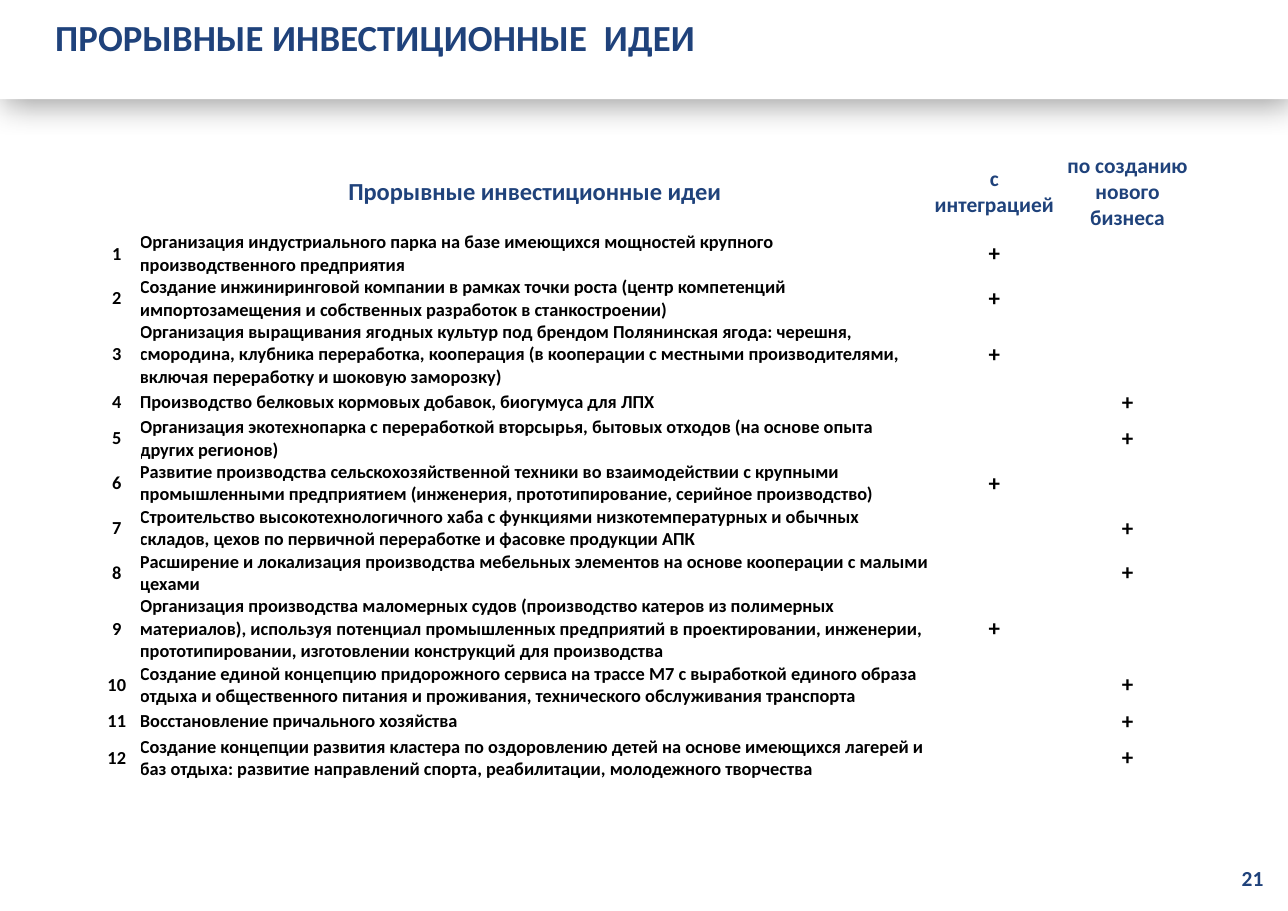
from dataclasses import dataclass

import pptx
import pptx.dml.color
import pptx.enum.shapes
import pptx.enum.text
import pptx.oxml
import pptx.oxml.ns
import pptx.util
from lxml import etree

Inches = pptx.util.Inches
Pt = pptx.util.Pt
Align = pptx.enum.text.PP_ALIGN
Anchor = pptx.enum.text.MSO_ANCHOR

NAVY = pptx.dml.color.RGBColor(0x1F, 0x42, 0x7B)
BLACK = pptx.dml.color.RGBColor(0, 0, 0)
WHITE = pptx.dml.color.RGBColor(0xFF, 0xFF, 0xFF)
FONT = "Calibri"
WIDTH = 11.69
COLS = (0.42, 7.17, 1.17, 1.25)
HEAD = 0.71
HEIGHTS = {1: 0.25, 2: 0.4, 3: 0.6}
JOIN = 2
NEW = 3


@dataclass
class Idea:
    text: str
    mark: int
    lines: int = 2


@dataclass
class Label:
    text: str
    size: float
    color: pptx.dml.color.RGBColor
    align: Align


IDEAS = (
    Idea("Организация индустриального парка на базе имеющихся мощностей крупного "
         "производственного предприятия", JOIN),
    Idea("Создание инжиниринговой компании в рамках точки роста (центр компетенций "
         "импортозамещения и собственных разработок в станкостроении)", JOIN),
    Idea("Организация выращивания ягодных культур под брендом Полянинская ягода: черешня, "
         "смородина, клубника переработка, кооперация (в кооперации с местными "
         "производителями, включая переработку и шоковую заморозку)", JOIN, 3),
    Idea("Производство белковых кормовых добавок, биогумуса для ЛПХ", NEW, 1),
    Idea("Организация экотехнопарка с переработкой вторсырья, бытовых отходов "
         "(на основе опыта других регионов)", NEW),
    Idea("Развитие производства сельскохозяйственной техники во взаимодействии с крупными "
         "промышленными предприятием (инженерия, прототипирование, серийное производство)",
         JOIN),
    Idea("Строительство высокотехнологичного хаба с функциями низкотемпературных и обычных "
         "складов, цехов по первичной переработке и фасовке продукции АПК", NEW),
    Idea("Расширение и локализация производства мебельных элементов на основе кооперации "
         "с малыми цехами", NEW),
    Idea("Организация производства маломерных судов (производство катеров из полимерных "
         "материалов), используя потенциал промышленных предприятий в проектировании, "
         "инженерии, прототипировании, изготовлении конструкций для производства", JOIN, 3),
    Idea("Создание единой концепцию придорожного сервиса на трассе М7 с выработкой единого "
         "образа отдыха и общественного питания и проживания, технического обслуживания "
         "транспорта", NEW),
    Idea("Восстановление причального хозяйства", NEW, 1),
    Idea("Создание концепции развития кластера по оздоровлению детей на основе имеющихся "
         "лагерей и баз отдыха: развитие направлений спорта, реабилитации, молодежного "
         "творчества", NEW),
)


def write(frame, label: Label) -> None:
    frame.text = label.text
    para = frame.paragraphs[0]
    para.alignment = label.align
    for run in para.runs:
        run.font.name = FONT
        run.font.size = Pt(label.size)
        run.font.bold = True
        run.font.color.rgb = label.color


def place(shape, left: float, top: float, width: float, height: float) -> None:
    shape.left, shape.top = Inches(left), Inches(top)
    shape.width, shape.height = Inches(width), Inches(height)


def inset(box, left: float, top: float, right: float, bottom: float) -> None:
    box.margin_left, box.margin_top = Inches(left), Inches(top)
    box.margin_right, box.margin_bottom = Inches(right), Inches(bottom)


def fill_cell(cell, label: Label) -> None:
    cell.fill.background()
    inset(cell, 0, 0, 0, 0)
    cell.vertical_anchor = Anchor.MIDDLE
    if label.text:
        write(cell.text_frame, label)
    else:
        para = cell.text_frame.paragraphs[0]._p
        etree.SubElement(para, pptx.oxml.ns.qn("a:endParaRPr"), sz="1200")


def add_ideas(slide) -> None:
    heights = [HEAD] + [HEIGHTS[idea.lines] for idea in IDEAS]
    table = slide.shapes.add_table(
        len(heights), len(COLS), Inches(0.85), Inches(1.39),
        Inches(sum(COLS)), Inches(sum(heights))).table
    table.first_row = False
    table.horz_banding = False
    for col, width in zip(table.columns, COLS):
        col.width = Inches(width)
    for row, height in zip(table.rows, heights):
        row.height = Inches(height)
    heads = (("", 14), ("Прорывные инвестиционные идеи", 16),
             ("с интеграцией", 14), ("по созданию нового бизнеса", 14))
    for col, (text, size) in enumerate(heads):
        fill_cell(table.cell(0, col), Label(text, size, NAVY, Align.CENTER))
    for row, idea in enumerate(IDEAS, 1):
        fill_cell(table.cell(row, 0), Label(str(row), 12, BLACK, Align.CENTER))
        fill_cell(table.cell(row, 1), Label(idea.text, 12, BLACK, Align.LEFT))
        for col in (JOIN, NEW):
            mark = "+" if col == idea.mark else ""
            fill_cell(table.cell(row, col), Label(mark, 15, BLACK, Align.CENTER))


def add_band(slide) -> None:
    band = slide.shapes.add_shape(
        pptx.enum.shapes.MSO_SHAPE.RECTANGLE, 0, 0, Inches(WIDTH), Inches(0.9))
    band.fill.solid()
    band.fill.fore_color.rgb = WHITE
    band.line.fill.background()
    band.shadow.inherit = False
    effects = band.element.spPr.find(pptx.oxml.ns.qn("a:effectLst"))
    effects.append(pptx.oxml.parse_xml(
        f'<a:outerShdw {pptx.oxml.ns.nsdecls("a")} blurRad="{Pt(22)}" dist="{Pt(3)}" '
        'dir="2700000" algn="tl" rotWithShape="0"><a:srgbClr val="000000">'
        '<a:alpha val="40000"/></a:srgbClr></a:outerShdw>'))


def add_title(slide) -> None:
    title = slide.shapes.title
    title.element.getparent().append(title.element)
    place(title, 0.49, 0.12, 11.2, 0.42)
    frame = title.text_frame
    inset(frame, 0.01, 0.01, 0, 0)
    frame.word_wrap = True
    frame.auto_size = pptx.enum.text.MSO_AUTO_SIZE.NONE
    frame.vertical_anchor = Anchor.TOP
    write(frame, Label("ПРОРЫВНЫЕ ИНВЕСТИЦИОННЫЕ  ИДЕИ", 24, NAVY, Align.LEFT))
    para = frame.paragraphs[0]
    para.space_before = Pt(1)
    para.runs[0].font._element.set("spc", "10")


def add_page(slide) -> None:
    box = slide.shapes.add_textbox(0, 0, 0, 0)
    place(box, 11.2, 7.8, 0.48, 0.47)
    frame = box.text_frame
    inset(frame, 0.07, 0.05, 0.1, 0.05)
    frame.word_wrap = True
    write(frame, Label("21", 14, NAVY, Align.LEFT))
    frame.paragraphs[0].space_before = Pt(2.1)


def main() -> None:
    deck = pptx.Presentation()
    deck.slide_width, deck.slide_height = Inches(WIDTH), Inches(8.27)
    slide = deck.slides.add_slide(deck.slide_layouts[5])
    add_ideas(slide)
    add_band(slide)
    add_title(slide)
    add_page(slide)
    deck.save("out.pptx")


if __name__ == "__main__":
    main()
